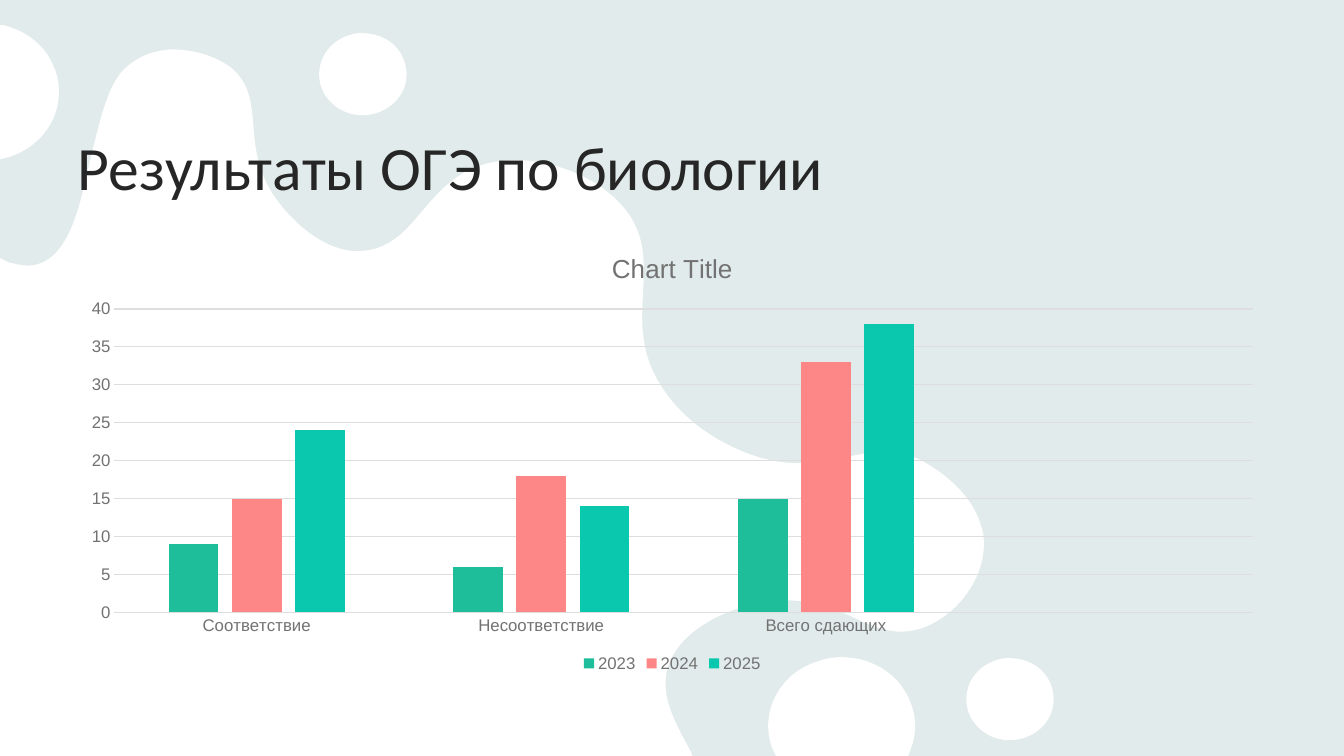
"""Build the slide on biology exam results: a column chart over a white blob pattern."""
import copy
from dataclasses import dataclass, field

from lxml import etree
from pptx import Presentation
from pptx import util as u
from pptx.chart import data
from pptx.dml import color
from pptx.enum import chart as ch, shapes, text
from pptx.oxml import ns

WIDE, HIGH = 40 / 3, 7.5
WHITE, DARK, GREY, PALE = "FFFFFF", "262626", "727272", "DEDEDE"
Point = tuple[float, float]


@dataclass
class Blob:
    start: Point
    curves: list[tuple[float, ...]]
    ends: list[Point] = field(default_factory=list)


@dataclass
class Series:
    name: str
    nums: list[int | None]
    hue: str


def bubble(x: float, y: float) -> Blob:
    turns = [
        (0.15, -0.01, 0.3, 0.04, 0.39, 0.15),
        (0.44, 0.21, 0.47, 0.28, 0.48, 0.36),
        (0.51, 0.58, 0.34, 0.78, 0.1, 0.81),
        (-0.13, 0.84, -0.35, 0.68, -0.38, 0.46),
        (-0.41, 0.23, -0.24, 0.03, 0, 0),
    ]
    return Blob((x, y), [tuple(n + (y if i % 2 else x) for i, n in enumerate(turn))
                         for turn in turns])


BLOBS = [
    bubble(9.97, 6.53),
    Blob((7.66, 7.42), [
        (7.53, 7.06, 7.74, 6.67, 8.12, 6.56),
        (8.2, 6.53, 8.27, 6.52, 8.35, 6.52),
        (8.58, 6.52, 8.8, 6.62, 8.94, 6.8),
        (8.98, 6.86, 9.02, 6.92, 9.04, 6.99),
        (9.09, 7.12, 9.09, 7.26, 9.05, 7.39),
    ], [(9.01, HIGH), (7.7, HIGH)]),
    Blob((0.08, 2.6), [
        (0.19, 2.63, 0.29, 2.65, 0.38, 2.62),
        (0.67, 2.53, 0.78, 2.09, 0.85, 1.78),
        (1.04, 0.97, 1.1, 0.74, 1.36, 0.59),
        (1.45, 0.53, 1.57, 0.5, 1.7, 0.49),
        (1.91, 0.49, 2.13, 0.55, 2.29, 0.67),
        (2.67, 0.98, 2.35, 1.47, 2.76, 2),
        (2.81, 2.07, 3.16, 2.52, 3.59, 2.49),
        (4.15, 2.45, 4.2, 1.78, 4.84, 1.62),
        (5.29, 1.51, 5.88, 1.7, 6.18, 2.05),
        (6.65, 2.6, 6.1, 3.2, 6.6, 3.89),
        (6.94, 4.38, 7.53, 4.54, 7.58, 4.55),
        (8.27, 4.73, 8.66, 4.29, 9.18, 4.59),
        (9.28, 4.65, 9.63, 4.86, 9.73, 5.21),
        (9.75, 5.26, 9.76, 5.31, 9.76, 5.36),
        (9.78, 5.74, 9.48, 6.13, 9.12, 6.24),
        (8.63, 6.38, 8.39, 5.91, 7.71, 5.96),
        (7.36, 5.98, 6.84, 6.17, 6.66, 6.53),
        (6.51, 6.84, 6.68, 7.14, 6.85, 7.45),
    ], [(6.87, HIGH), (0, HIGH), (0, 2.56)]),
    bubble(3.55, 0.33),
    Blob((0.07, 0.26), [
        (0.22, 0.3, 0.35, 0.39, 0.44, 0.5),
        (0.49, 0.56, 0.52, 0.63, 0.55, 0.7),
        (0.67, 1.06, 0.47, 1.44, 0.08, 1.56),
    ], [(0, 1.58), (0, 0.25), (0.04, 0.25)]),
]
GROUPS = ["Соответствие", "Несоответствие", "Всего сдающих", ""]
YEARS = [
    Series("2023", [9, 6, 15, None], "1EBE9B"),
    Series("2024", [15, 18, 33, None], "FD8686"),
    Series("2025", [24, 14, 38, None], "0AC8AD"),
]


def paint(form, hue: str) -> None:
    form.solid()
    form.fore_color.rgb = color.RGBColor.from_string(hue)


def style(font, size: float, hue: str = GREY, face: str = "Arial") -> None:
    font.size, font.name, font.bold = u.Pt(size), face, False
    paint(font.fill, hue)


def write(frame, words: str, *, size: float, hue: str, face: str, align) -> None:
    frame.text = words
    line = frame.paragraphs[0]
    line.alignment = align
    style(line.runs[0].font, size, hue, face)


def finish(shape, hue: str):
    paint(shape.fill, hue)
    shape.line.fill.background()
    shape.shadow.inherit = False
    return shape


def scale(points: list[Point]) -> list[tuple[int, int]]:
    return [(u.Inches(x), u.Inches(y)) for x, y in points]


def bend(shape) -> None:
    track = shape._element.find(".//" + ns.qn("a:path"))
    moves = track.findall(ns.qn("a:moveTo"))
    for move, blob in zip(moves, BLOBS):
        lines = list(move.itersiblings())[:3 * len(blob.curves)]
        for i in range(0, len(lines), 3):
            curve = etree.Element(ns.qn("a:cubicBezTo"))
            lines[i].addprevious(curve)
            for line in lines[i:i + 3]:
                curve.append(line[0])
                track.remove(line)


def draw_blobs(slide):
    pen = slide.shapes.build_freeform(*scale([BLOBS[0].start])[0])
    for i, blob in enumerate(BLOBS):
        if i:
            pen.move_to(*scale([blob.start])[0])
        knots = [curve[k:k + 2] for curve in blob.curves for k in (0, 2, 4)]
        pen.add_line_segments(scale(knots + blob.ends))
    shape = finish(pen.convert_to_shape(), WHITE)
    bend(shape)
    return shape


def draw_back(slide) -> None:
    paint(slide.background.fill, "E9F3F3")
    tint = finish(slide.shapes.add_shape(
        shapes.MSO_SHAPE.RECTANGLE, 0, 0, u.Inches(WIDE), u.Inches(HIGH)), "AEAEAE")
    shade = tint.fill._xPr.find(ns.qn("a:solidFill"))[0]
    etree.SubElement(shade, ns.qn("a:alpha"), val="10000")
    tree = slide.slide_layout.shapes._spTree
    for i, shape in enumerate((tint, draw_blobs(slide))):
        shape._element.nvSpPr.cNvPr.set("id", str(20 + i))
        tree.insert(2 + i, shape._element)


def draw_title(slide) -> None:
    title = slide.shapes.title
    title.left, title.top = u.Inches(0.67), u.Inches(0.61)
    title.width, title.height = u.Inches(12), u.Inches(1.45)
    frame = title.text_frame
    frame.word_wrap = True
    frame.auto_size = text.MSO_AUTO_SIZE.NONE
    frame.vertical_anchor = text.MSO_ANCHOR.BOTTOM
    write(frame, "Результаты ОГЭ по биологии", size=44, hue=DARK, face="Calibri",
          align=text.PP_ALIGN.LEFT)


def draw_chart(slide) -> None:
    table = data.CategoryChartData()
    table.categories = GROUPS
    for year in YEARS:
        table.add_series(year.name, year.nums)
    chart = slide.shapes.add_chart(
        ch.XL_CHART_TYPE.COLUMN_CLUSTERED, u.Inches(0.67), u.Inches(2.3),
        u.Inches(12), u.Inches(4.41), table).chart
    for blank in chart._chartSpace.xpath(".//c:cat//c:pt[@idx='3']"):
        blank.getparent().remove(blank)
    style(chart.font, 10, DARK)
    chart.has_legend = True
    legend = chart.legend
    legend.position = ch.XL_LEGEND_POSITION.BOTTOM
    legend.include_in_layout = False
    style(legend.font, 18.6)
    chart.has_title = True
    chart.chart_title._element.append(copy.deepcopy(legend._element.find(ns.qn("c:txPr"))))
    style(legend.font, 12)
    across, up = chart.category_axis, chart.value_axis
    for axis in (across, up):
        axis.major_tick_mark = axis.minor_tick_mark = ch.XL_TICK_MARK.NONE
        style(axis.tick_labels.font, 12)
    up.format.line.fill.background()
    for rule in (across.format.line, up.major_gridlines.format.line):
        paint(rule.fill, PALE)
        rule.width = u.Pt(0.75)
    plot = chart.plots[0]
    plot.gap_width, plot.overlap, plot.vary_by_categories = 219, -27, False
    for bars, year in zip(plot.series, YEARS):
        paint(bars.format.fill, year.hue)
        bars.invert_if_negative = False


def main() -> None:
    deck = Presentation()
    deck.slide_width, deck.slide_height = u.Inches(WIDE), u.Inches(HIGH)
    slide = deck.slides.add_slide(deck.slide_layouts[5])
    draw_back(slide)
    draw_title(slide)
    draw_chart(slide)
    deck.save("out.pptx")


if __name__ == "__main__":
    main()
